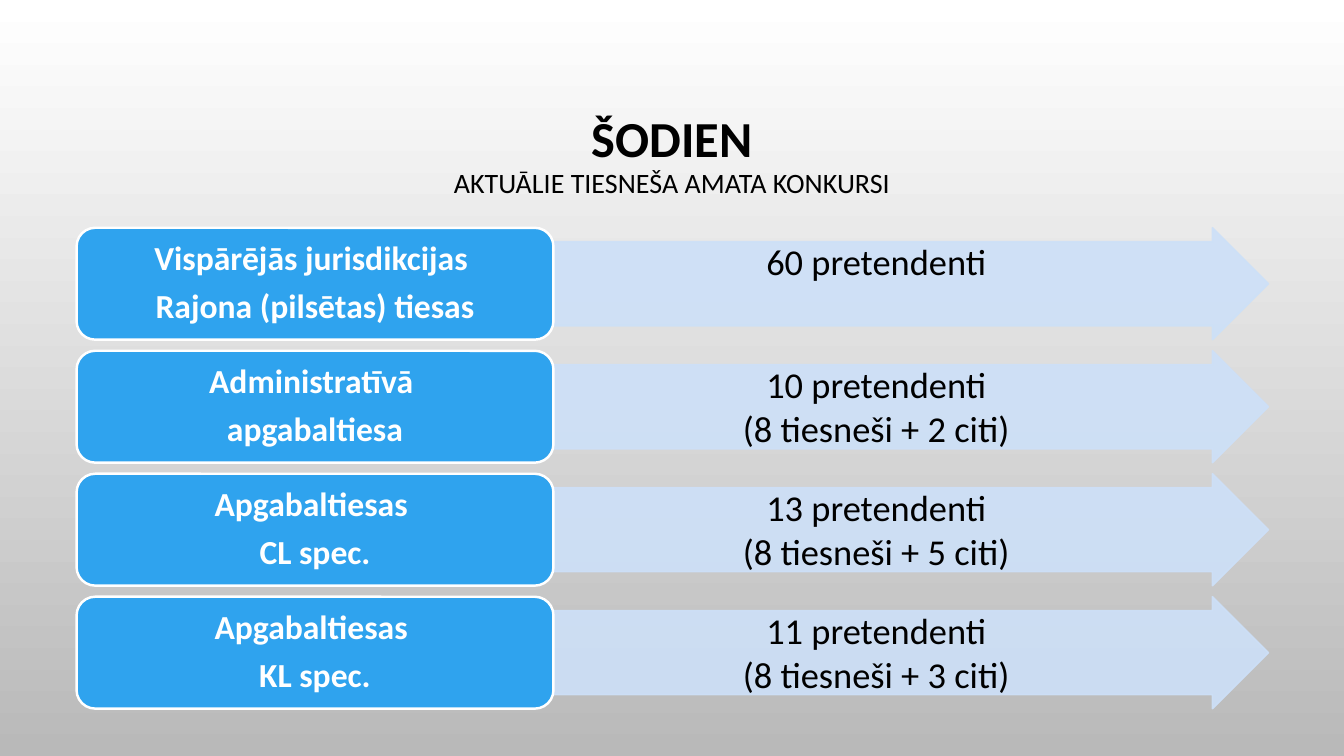
from lxml import etree
from pptx import Presentation
from pptx.dml.color import RGBColor
from pptx.enum.shapes import MSO_SHAPE as SHAPE
from pptx.enum.text import MSO_ANCHOR as ANCHOR, MSO_AUTO_SIZE as AUTO_SIZE, PP_ALIGN as ALIGN
from pptx.oxml.ns import qn
from pptx.util import Inches, Pt

FONT = "Calibri"
BLACK = RGBColor(0x00, 0x00, 0x00)
WHITE = RGBColor(0xFF, 0xFF, 0xFF)
GREY = RGBColor(0xB9, 0xB9, 0xB9)
BLUE = RGBColor(0x2F, 0xA3, 0xEE)
PALE_BLUE = RGBColor(0xCD, 0xE0, 0xF8)

COURT_LEFT, COURT_WIDTH = 0.76, 4.73
ARROW_LEFT, ARROW_WIDTH = COURT_LEFT + COURT_WIDTH, 7.09
FIRST_TOP, ROW_HEIGHT, ROW_PITCH = 2.26, 1.11, 1.22

COMPETITIONS = [
    (["Vispārējās jurisdikcijas ", "Rajona (pilsētas) tiesas"], ["60 pretendenti"]),
    (["Administratīvā ", "apgabaltiesa"], ["10 pretendenti", "(8 tiesneši + 2 citi)"]),
    (["Apgabaltiesas ", "CL spec."], ["13 pretendenti", "(8 tiesneši + 5 citi)"]),
    (["Apgabaltiesas ", "KL spec."], ["11 pretendenti", "(8 tiesneši + 3 citi)"]),
]


def paint_background(slide):
    fill = slide.background.fill
    fill.gradient()
    fill.gradient_angle = 270
    for stop, color in zip(fill.gradient_stops, (WHITE, GREY)):
        stop.color.rgb = color


def add_run(paragraph, text, size, color, bold=False):
    run = paragraph.add_run()
    run.text = text
    font = run.font
    font.name, font.size, font.bold = FONT, Pt(size), bold
    font.color.rgb = color


def write_lines(frame, lines, size, color, gap, bold=False):
    """Write one centred paragraph per line, with gap points after each."""
    frame.word_wrap = True
    for index, line in enumerate(lines):
        paragraph = frame.add_paragraph() if index else frame.paragraphs[0]
        paragraph.alignment = ALIGN.CENTER
        paragraph.line_spacing = 0.9
        paragraph.space_after = Pt(gap)
        add_run(paragraph, line, size, color, bold)


def write_title(slide, heading, subheading):
    title = slide.shapes.title
    title.left, title.top = Inches(1), Inches(0.68)
    title.width, title.height = Inches(11.33), Inches(1.75)
    frame = title.text_frame
    frame.auto_size = AUTO_SIZE.NONE
    frame.vertical_anchor = ANCHOR.MIDDLE
    paragraph = frame.paragraphs[0]
    paragraph.alignment = ALIGN.CENTER
    paragraph.line_spacing = 0.9
    add_run(paragraph, heading, 36, BLACK, bold=True)
    paragraph.add_line_break()
    line_break = paragraph._p.find(qn("a:br"))
    etree.SubElement(line_break, qn("a:rPr"), sz="3600")
    add_run(paragraph, subheading, 20, BLACK)


def add_block(slide, kind, left, top, width, fill, line, line_width):
    block = slide.shapes.add_shape(
        kind, Inches(left), Inches(top), Inches(width), Inches(ROW_HEIGHT))
    block.shadow.inherit = False
    block.fill.solid()
    block.fill.fore_color.rgb = fill
    block.line.color.rgb = line
    block.line.width = Pt(line_width)
    return block


def add_applicants_arrow(slide, top, lines):
    arrow = add_block(slide, SHAPE.RIGHT_ARROW, ARROW_LEFT, top, ARROW_WIDTH,
                      PALE_BLUE, PALE_BLUE, 1.25)
    arrow.adjustments[0], arrow.adjustments[1] = 0.75, 0.5
    for color in arrow._element.spPr.iter(qn("a:srgbClr")):
        etree.SubElement(color, qn("a:alpha"), val="90000")
    frame = arrow.text_frame
    frame.margin_left = frame.margin_top = frame.margin_bottom = Inches(0.02)
    frame.margin_right = Inches(0.29)  # keeps the text out of the arrowhead
    frame.vertical_anchor = ANCHOR.TOP
    write_lines(frame, lines, 26, BLACK, gap=3.9)


def add_court(slide, top, lines):
    court = add_block(slide, SHAPE.ROUNDED_RECTANGLE, COURT_LEFT, top, COURT_WIDTH,
                      BLUE, WHITE, 1.75)
    court.text_frame.vertical_anchor = ANCHOR.MIDDLE
    write_lines(court.text_frame, lines, 24, WHITE, gap=8.4, bold=True)


def main():
    prs = Presentation()
    prs.slide_width, prs.slide_height = Inches(13.33), Inches(7.5)
    slide = prs.slides.add_slide(prs.slide_layouts.get_by_name("Title Only"))
    paint_background(slide)
    write_title(slide, "ŠODIEN", "AKTUĀLIE TIESNEŠA AMATA KONKURSI")
    for row, (court, applicants) in enumerate(COMPETITIONS):
        top = FIRST_TOP + row * ROW_PITCH
        add_applicants_arrow(slide, top, applicants)
        add_court(slide, top, court)
    prs.save("out.pptx")


if __name__ == "__main__":
    main()
